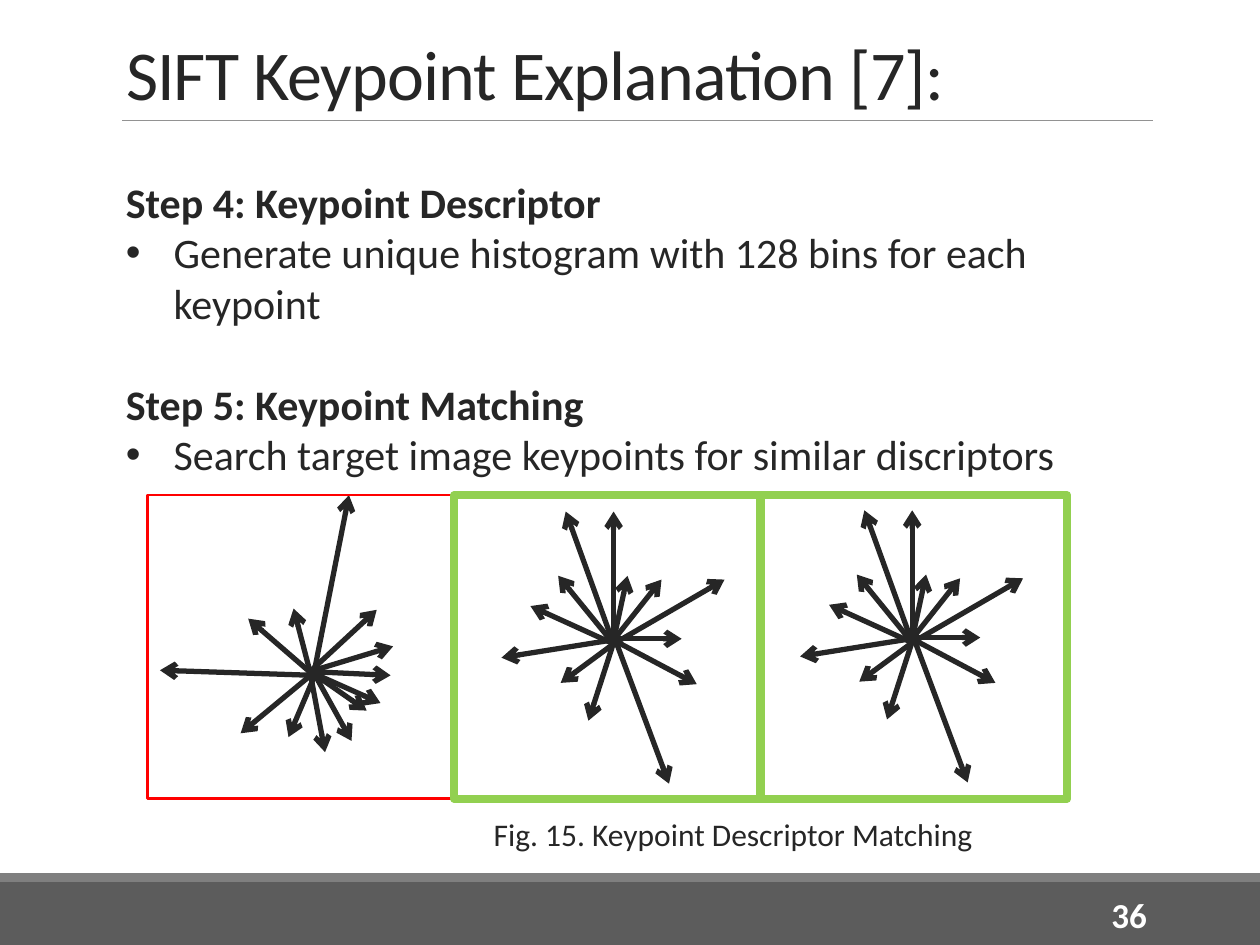
from pptx import Presentation
from pptx.dml.color import RGBColor
from pptx.enum.shapes import MSO_CONNECTOR, MSO_SHAPE
from pptx.enum.text import MSO_ANCHOR, MSO_AUTO_SIZE, PP_ALIGN
from pptx.oxml.ns import qn
from pptx.util import Inches, Pt
from lxml.etree import SubElement

INK = RGBColor(0x26, 0x26, 0x26)
WHITE = RGBColor(0xFF, 0xFF, 0xFF)
BAR = RGBColor(0x5C, 0x5C, 0x5C)
STRIP = RGBColor(0x7F, 0x7F, 0x7F)
RULE = RGBColor(0x92, 0x92, 0x92)
RED = RGBColor(0xFF, 0x00, 0x00)
GREEN = RGBColor(0x92, 0xD0, 0x50)


def add_line(shapes, start, end, color, width):
    x1, y1, x2, y2 = [Inches(v) for v in (*start, *end)]
    line = shapes.add_connector(MSO_CONNECTOR.STRAIGHT, x1, y1, x2, y2)
    line.line.color.rgb = color
    line.line.width = Pt(width)
    SubElement(line._element.spPr, qn("a:effectLst"))
    return line


def add_text(box, lines, size, color=INK, bold=False):
    left, top, width, height = [Inches(v) for v in box]
    frame = slide.shapes.add_textbox(left, top, width, height).text_frame
    frame.word_wrap = True
    frame.text = "\n".join(lines)
    for para in frame.paragraphs:
        font = para.font
        font.name, font.size, font.bold = "Calibri", Pt(size), bold
        font.color.rgb = color
    return frame


prs = Presentation()
prs.slide_width, prs.slide_height = Inches(10), Inches(7.5)
slide = prs.slides.add_slide(prs.slide_layouts[5])
shapes = slide.shapes

# Footer bars and title rule
for top, height, color in [(7, 0.5, BAR), (6.93, 0.07, STRIP)]:
    bar = shapes.add_shape(MSO_SHAPE.RECTANGLE, 0, Inches(top), Inches(10), Inches(height))
    bar.shadow.inherit = False
    bar.fill.solid()
    bar.fill.fore_color.rgb = color
    bar.line.fill.background()
add_line(shapes, (0.97, 0.96), (9.15, 0.96), RULE, 0.5)

# Title
title = shapes.title
title.left, title.top = Inches(0.9), Inches(0.23)
title.width, title.height = Inches(8.23), Inches(0.73)
frame = title.text_frame
frame.text = "SIFT Keypoint Explanation [7]:"
frame.vertical_anchor = MSO_ANCHOR.BOTTOM
frame.auto_size = MSO_AUTO_SIZE.NONE
para = frame.paragraphs[0]
para.alignment = PP_ALIGN.LEFT
para.line_spacing = 0.85
para.font.name, para.font.size = "Calibri", Pt(40)
para.font.color.rgb = INK
para.runs[0].font._element.set("spc", "-50")

# Page number
frame = add_text((8.12, 7.06, 1.08, 0.4), ["36"], 20, WHITE, True)
frame.vertical_anchor = MSO_ANCHOR.MIDDLE
frame.paragraphs[0].alignment = PP_ALIGN.RIGHT

# Steps: each heading is followed by one bullet
steps = [
    "Step 4: Keypoint Descriptor",
    "Generate unique histogram with 128 bins for each keypoint",
    "Step 5: Keypoint Matching",
    "Search target image keypoints for similar discriptors",
]
paras = add_text((0.9, 1.35, 7.59, 3.74), steps, 24).paragraphs
for head in paras[::2]:
    head.font.bold = True
for item in paras[1::2]:
    props = item._p.get_or_add_pPr()
    props.set("marL", str(Inches(0.38)))
    props.set("indent", str(-Inches(0.38)))
    mark = props.makeelement(qn("a:buFont"), {"typeface": "Arial"})
    dot = props.makeelement(qn("a:buChar"), {"char": "•"})
    props.insert(0, mark)
    props.insert(1, dot)
paras[2].space_before = Pt(29)

# Caption
add_text((3.82, 6.42, 4.35, 0.4), ["Fig. 15. Keypoint Descriptor Matching"], 18)

# Descriptor arrows: start and end of each
other = [
    (2.48, 5.34, 3.02, 5.58), (2.48, 5.34, 2.91, 5.64), (2.49, 5.34, 2.79, 5.88),
    (2.46, 5.33, 3.1, 5.36), (2.46, 5.33, 3.12, 5.13), (2.46, 5.33, 2.99, 4.84),
    (2.46, 5.33, 2.58, 5.97), (2.49, 5.34, 1.91, 5.82), (2.49, 5.38, 2.29, 5.85),
    (2.48, 5.4, 2.77, 3.93), (2.46, 5.33, 2.33, 4.83), (2.49, 5.36, 1.97, 4.91),
    (2.49, 5.36, 1.27, 5.32),
]
match = [
    (4.87, 5.08, 4.87, 4.06), (4.87, 5.08, 4.98, 4.57), (4.87, 5.08, 5.25, 4.6),
    (4.87, 5.11, 4.49, 4.06), (4.87, 5.11, 4.43, 4.57), (4.87, 5.11, 4.21, 4.81),
    (4.87, 5.11, 5.75, 4.6), (4.87, 5.08, 5.53, 5.43), (4.9, 5.07, 5.41, 5.07),
    (4.92, 5.07, 3.98, 5.22), (4.87, 5.11, 4.45, 5.42), (4.88, 5.07, 4.67, 5.72),
    (4.88, 5.07, 5.31, 6.22),
]
# The matching star is drawn twice, the second moved right
for star, dx, dy in [(other, 0, 0), (match, 0, 0), (match, 2.37, -0.01)]:
    group = shapes.add_group_shape()
    for x1, y1, x2, y2 in star:
        start, end = (x1 + dx, y1 + dy), (x2 + dx, y2 + dy)
        arrow = add_line(group.shapes, start, end, INK, 3)
        SubElement(arrow.line._get_or_add_ln(), qn("a:tailEnd"), type="arrow")

# Frames around the stars
for i, (color, width) in enumerate([(RED, 1.5), (GREEN, 4.5), (GREEN, 4.5)]):
    left = Inches(1.17 + i * 2.435)
    box = shapes.add_shape(MSO_SHAPE.RECTANGLE, left, Inches(3.93), Inches(2.43), Inches(2.41))
    box.shadow.inherit = False
    box.fill.background()
    box.line.color.rgb = color
    box.line.width = Pt(width)

prs.save("out.pptx")
